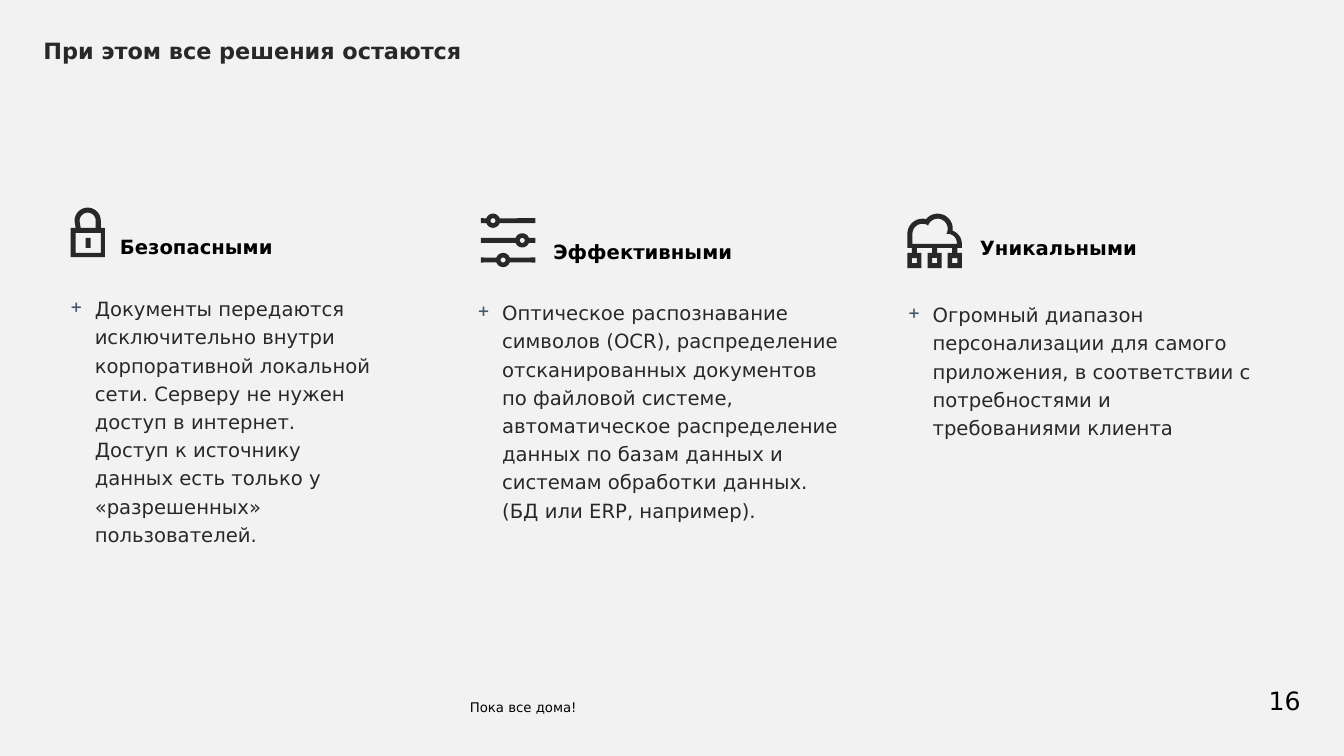
import math
from pptx import Presentation
from pptx import util as u
from pptx.dml.color import RGBColor
from pptx.enum import shapes, text
from pptx.oxml import parse_xml
from pptx.oxml.ns import nsdecls

FONT = "DejaVu Sans"
COLORS = {"ground": "F2F2F2", "ink": "282828", "black": "000000", "bullet": "44546A"}
STROKE = 0.05

COLUMNS = [
    {"heading": "Безопасными", "heading_at": (1.09, 2.28, 1.75, 0.34),
     "body_at": (0.7, 2.9, 3, 1.85),
     "body": "Документы передаются исключительно внутри корпоративной локальной сети. "
             "Серверу не нужен доступ в интернет.\n"
             "Доступ к источнику данных есть только у «разрешенных» пользователей."},
    {"heading": "Эффективными", "heading_at": (5.39, 2.33, 2, 0.34),
     "body_at": (4.74, 2.94, 3.6, 1.61),
     "body": "Оптическое распознавание символов (OCR), распределение отсканированных "
             "документов по файловой системе, автоматическое распределение данных "
             "по базам данных и системам обработки данных.\n(БД или ERP, например)."},
    {"heading": "Уникальными", "heading_at": (9.62, 2.29, 1.79, 0.34),
     "body_at": (9.01, 2.96, 3.5, 1.45),
     "body": "Огромный диапазон персонализации для самого приложения, "
             "в соответствии с потребностями и требованиями клиента"},
]


def rgb(name):
    return RGBColor.from_string(COLORS[name])


def place(item, at):
    for side, value in zip(("left", "top", "width", "height"), at):
        setattr(item, side, u.Inches(value))


def write(box, words, size, color, inset=0, wrap=True, bold=False, **layout):
    frame = box.text_frame
    settings = {"word_wrap": wrap, "auto_size": text.MSO_AUTO_SIZE.NONE,
                "vertical_anchor": text.MSO_ANCHOR.TOP,
                "margin_left": u.Inches(inset), "margin_right": u.Inches(inset),
                "margin_top": u.Inches(inset / 2), "margin_bottom": u.Inches(inset / 2)}
    for key, value in settings.items():
        setattr(frame, key, value)
    para = frame.paragraphs[0]
    para.text = words
    for key, value in layout.items():
        setattr(para, key, value)
    for span in para.runs:
        for key, value in {"name": FONT, "size": u.Pt(size), "bold": bold}.items():
            setattr(span.font, key, value)
        span.font.color.rgb = rgb(color)
    return para


def add_text(page, at, words, size, color, **layout):
    box = page.shapes.add_textbox(*map(u.Inches, at))
    return write(box, words, size, color, **layout)


def add_bullet(para):
    props = para._p.get_or_add_pPr()
    props.set("marL", str(u.Inches(0.24)))
    props.set("indent", str(u.Inches(-0.24)))
    names = nsdecls("a")
    props.append(parse_xml(f'<a:buClr {names}><a:srgbClr val="{COLORS["bullet"]}"/></a:buClr>'))
    props.append(parse_xml(f'<a:buChar {names} char="+"/>'))


def paint(shape):
    shape.shadow.inherit = False
    shape.fill.solid()
    shape.fill.fore_color.rgb = rgb("ink")
    shape.line.fill.background()


def add_outline(icon, *contours):
    scaled = [[(u.Inches(x), u.Inches(y)) for x, y in contour] for contour in contours]
    builder = icon.shapes.build_freeform(*scaled[0][0], scale=1.0)
    for contour in scaled:
        builder.move_to(*contour[0])
        builder.add_line_segments(contour[1:], close=True)
    paint(builder.convert_to_shape())


def arc(x, y, radius, start, stop, steps=20):
    angles = [math.radians(start + (stop - start) * i / steps) for i in range(steps + 1)]
    return [(x + radius * math.cos(a), y + radius * math.sin(a)) for a in angles]


def rect(left, top, right, bottom):
    return [(left, top), (right, top), (right, bottom), (left, bottom)]


def draw_lock(page):
    icon = page.shapes.add_group_shape()
    x, y = 0.87, 2.19
    outer = [(0.7, 2.55), (0.7, 2.26), (0.75, 2.26), *arc(x, y, 0.13, 180, 360),
             (1, 2.26), (1.04, 2.26), (1.04, 2.55)]
    shackle = [(0.8, 2.26), *arc(x, y, 0.08, 180, 360), (0.95, 2.26)]
    add_outline(icon, outer, shackle, rect(0.75, 2.31, 1, 2.51))
    paint(icon.shapes.add_shape(shapes.MSO_SHAPE.RECTANGLE,
                                *map(u.Inches, (0.85, 2.36, STROKE, 0.1))))


def draw_sliders(page):
    icon = page.shapes.add_group_shape()
    left, right, half = 4.77, 5.31, STROKE / 2
    for row, knob in enumerate((4.89, 5.18, 4.99)):
        y = 2.19 + row * 0.195
        bar = [(left, y - half), *arc(knob, y, 0.07, 200, 340), (right, y - half),
               (right, y + half), *arc(knob, y, 0.07, 20, 160), (left, y + half)]
        add_outline(icon, bar, arc(knob, y, half, 0, 360))


def server(x):
    half, side = STROKE / 2, 0.07
    body = [(x - half, 2.46), (x + half, 2.46), (x + half, 2.51), (x + side, 2.51),
            (x + side, 2.66), (x - side, 2.66), (x - side, 2.51), (x - half, 2.51)]
    return body, rect(x - half, 2.56, x + half, 2.61)


def draw_cloud(page):
    icon = page.shapes.add_group_shape()
    outer = [(9, 2.46), *arc(9.15, 2.32, 0.15, 180, 285), *arc(9.3, 2.27, 0.15, 222, 364),
             *arc(9.4, 2.42, 0.14, 288, 360), (9.54, 2.46)]
    inner = [(9.05, 2.42), *arc(9.15, 2.32, 0.1, 180, 300), *arc(9.3, 2.27, 0.1, 198, 390),
             *arc(9.4, 2.41, 0.09, 265, 360), (9.49, 2.42)]
    add_outline(icon, outer, inner, *server(9.07), *server(9.47))
    add_outline(icon, *server(9.27))


def main():
    deck = Presentation()
    deck.slide_width, deck.slide_height = u.Inches(13.33), u.Inches(7.5)
    page = deck.slides.add_slide(deck.slide_layouts[5])
    page.background.fill.solid()
    page.background.fill.fore_color.rgb = rgb("ground")
    title = page.shapes.title
    place(title, (0.43, 0.4, 8.46, 0.24))
    write(title, "При этом все решения остаются", 16, "ink", bold=True,
          line_spacing=0.9, alignment=text.PP_ALIGN.LEFT)
    for column in COLUMNS:
        add_bullet(add_text(page, column["body_at"], column["body"], 14, "ink",
                            line_spacing=1.2))
        add_text(page, column["heading_at"], column["heading"], 14, "black",
                 inset=0.1, wrap=False, bold=True)
    add_text(page, (4.66, 6.94, 6.69, 0.28), "Пока все дома!", 9.5, "black")
    add_text(page, (11.55, 6.8, 1.35, 0.41), "16", 18, "black",
             alignment=text.PP_ALIGN.RIGHT)
    draw_lock(page)
    draw_sliders(page)
    draw_cloud(page)
    deck.save("out.pptx")


if __name__ == "__main__":
    main()
